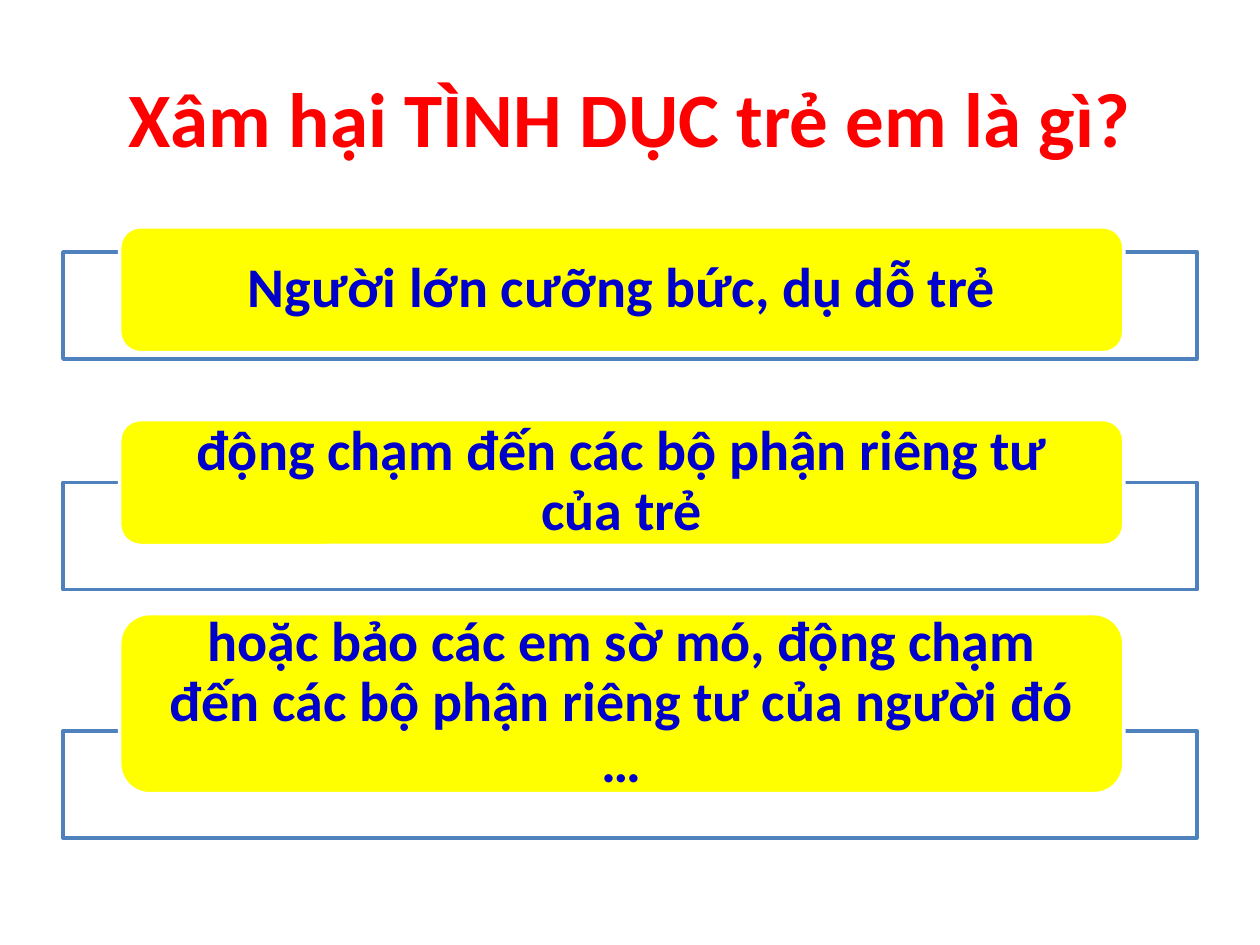
from pptx import Presentation
from pptx.dml.color import RGBColor
from pptx.enum.shapes import MSO_SHAPE
from pptx.enum.text import MSO_ANCHOR, PP_ALIGN
from pptx.util import Inches, Pt

RECT = MSO_SHAPE.RECTANGLE
ROUND = MSO_SHAPE.ROUNDED_RECTANGLE
MIDDLE = MSO_ANCHOR.MIDDLE
CENTER = PP_ALIGN.CENTER

COLORS = {
    "title": "FF0000",
    "text": "0000CC",
    "pill": "FFFF00",
    "frame": "4F81BD",
    "white": "FFFFFF",
}

# text, frame top, pill top, pill height
ITEMS = [
    ("Người lớn cưỡng bức, dụ dỗ trẻ", 2, 1.8, 1),
    ("động chạm đến các bộ phận riêng tư của trẻ", 3.83, 3.33, 1),
    ("hoặc bảo các em sờ mó, động chạm đến các bộ phận riêng tư "
     "của người đó …", 5.8, 4.87, 1.43),
]


class Deck:
    font = "Calibri"

    def __init__(self):
        self.prs = Presentation()
        self.prs.slide_width = Inches(10)
        self.prs.slide_height = Inches(7.5)
        self.slide = self.prs.slides.add_slide(self.prs.slide_layouts[5])

    def color(self, name):
        return RGBColor.from_string(COLORS[name])

    def label(self, shape, text, size, color):
        frame = shape.text_frame
        frame.text = text
        frame.word_wrap = True
        frame.vertical_anchor = MIDDLE
        para = frame.paragraphs[0]
        para.alignment = CENTER
        font = para.runs[0].font
        font.name = self.font
        font.size = Pt(size)
        font.bold = True
        font.color.rgb = self.color(color)

    def title(self, text):
        shape = self.slide.shapes.title
        shape.left, shape.top = Inches(0.5), Inches(0.3)
        shape.width, shape.height = Inches(9), Inches(1.25)
        self.label(shape, text, 44, "title")

    def box(self, kind, left, top, width, height, fill, line):
        shape = self.slide.shapes.add_shape(
            kind, Inches(left), Inches(top), Inches(width), Inches(height))
        shape.shadow.inherit = False
        shape.fill.solid()
        shape.fill.fore_color.rgb = self.color(fill)
        shape.line.color.rgb = self.color(line)
        shape.line.width = Pt(2)
        return shape

    def item(self, text, frame_top, top, height):
        """Draw an outlined frame with a text pill over its upper part."""
        self.box(RECT, 0.5, frame_top, 9, 0.85, "white", "frame")
        pill = self.box(ROUND, 0.95, top, 7.97, height, "pill", "white")
        self.label(pill, text, 32, "text")
        frame = pill.text_frame
        frame.margin_left = frame.margin_right = Inches(0.24)
        frame.margin_top = frame.margin_bottom = 0
        frame.paragraphs[0].line_spacing = 0.9


def main():
    deck = Deck()
    deck.title("Xâm hại TÌNH DỤC trẻ em là gì?")
    for item in ITEMS:
        deck.item(*item)
    deck.prs.save("out.pptx")


if __name__ == "__main__":
    main()
